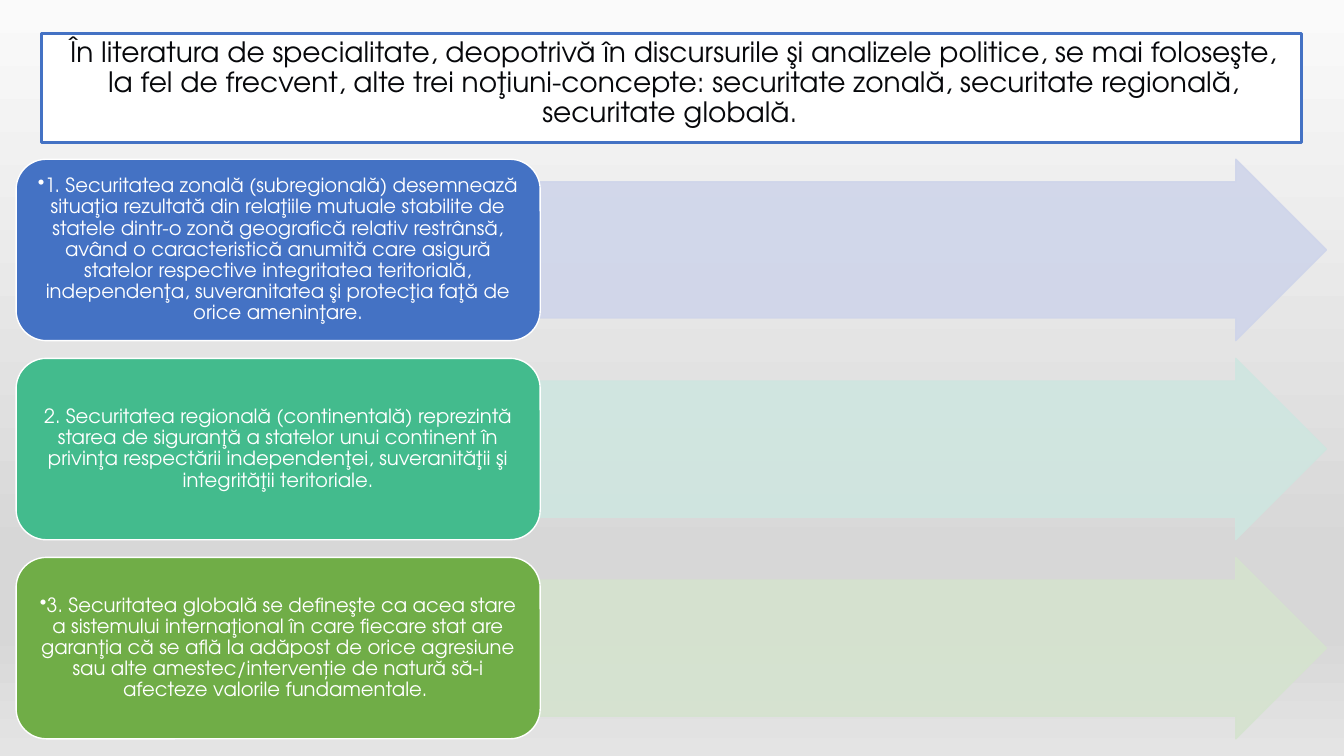
from lxml import etree
from pptx import Presentation
from pptx import util as u
from pptx.dml.color import RGBColor
from pptx.enum import shapes, text
from pptx.oxml.ns import qn

PX = 9144
FONT = "TeX Gyre Adventor"
COLOURS = {
    "ink": "07080B", "white": "FFFFFF", "blue": "4472C4", "teal": "43BB8D", "green": "70AD47",
    "pale_blue": "CFD5EA", "pale_teal": "CFE6E0", "pale_green": "D5E3CF",
}
BACKDROP = [(0, "FAFAFA"), (74, "D7D7D7"), (83, "D7D7D7"), (100, "E4E4E4")]
INTRO = ("În literatura de specialitate, deopotrivă în discursurile şi analizele politice, "
         "se mai foloseşte, la fel de frecvent, alte trei noţiuni-concepte: securitate zonală, "
         "securitate regională, securitate globală. ")
CONCEPTS = [
    ("blue", True,
     "1. Securitatea zonală (subregională) desemnează situaţia rezultată din relaţiile mutuale "
     "stabilite de statele dintr-o zonă geografică relativ restrânsă, având o caracteristică "
     "anumită care asigură statelor respective integritatea teritorială, independenţa, "
     "suveranitatea şi protecţia faţă de orice ameninţare."),
    ("teal", False,
     "2. Securitatea regională (continentală) reprezintă starea de siguranţă a statelor unui "
     "continent în privinţa respectării independenţei, suveranităţii şi integrităţii teritoriale."),
    ("green", True,
     "3. Securitatea globală se defineşte ca acea stare a sistemului internaţional în care "
     "fiecare stat are garanţia că se află la adăpost de orice agresiune sau alte "
     "amestec/intervenție de natură să-i afecteze valorile fundamentale. "),
]


def add_block(page, kind, box, fill, line, width):
    block = page.shapes.add_shape(kind, *(u.Emu(round(side * PX)) for side in box))
    block.shadow.inherit = False
    block.fill.solid()
    block.fill.fore_color.rgb = RGBColor.from_string(COLOURS[fill])
    block.line.color.rgb = RGBColor.from_string(COLOURS[line])
    block.line.width = u.Pt(width)
    return block


def write(block, words, size, colour, anchor):
    frame = block.text_frame
    frame.word_wrap = True
    frame.vertical_anchor = anchor
    para = frame.paragraphs[0]
    para.alignment = text.PP_ALIGN.CENTER
    para.line_spacing = 0.9
    span = para.add_run()
    span.text = words
    span.font.name = FONT
    span.font.size = u.Pt(size)
    span.font.color.rgb = RGBColor.from_string(COLOURS[colour])
    return para


def paint_backdrop(page):
    fill = page.background.fill
    fill.gradient()
    fill.gradient_angle = 270
    stops = page.element.find(".//" + qn("a:gsLst"))
    for stop in list(stops):
        stops.remove(stop)
    for position, colour in BACKDROP:
        stop = etree.SubElement(stops, qn("a:gs"), pos=str(position * 1000))
        etree.SubElement(stop, qn("a:srgbClr"), val=colour)


def add_intro(page, box):
    panel = add_block(page, shapes.MSO_SHAPE.RECTANGLE, box, "white", "blue", 2.25)
    para = write(panel, INTRO, 20, "ink", text.MSO_ANCHOR.TOP)
    para.space_before = u.Pt(18)
    para._p.get_or_add_pPr().set("marL", str(5 * PX))


def add_concept(page, box, colour, bulleted, words):
    left, top, width, height = box
    card_width = width * 2 / 5
    arrow = add_block(page, shapes.MSO_SHAPE.RIGHT_ARROW,
                      (left + card_width, top, width - card_width, height),
                      "pale_" + colour, "pale_" + colour, 1)
    arrow.adjustments[0] = 0.75
    arrow.adjustments[1] = 0.5
    for shade in arrow._element.spPr.iter(qn("a:srgbClr")):
        etree.SubElement(shade, qn("a:alpha"), val="90000")

    card = add_block(page, shapes.MSO_SHAPE.ROUNDED_RECTANGLE,
                     (left, top, card_width, height), colour, "white", 1)
    frame = card.text_frame
    frame.margin_left = frame.margin_right = 6 * PX
    frame.margin_top = frame.margin_bottom = 3 * PX
    para = write(card, words, 14, "white", text.MSO_ANCHOR.MIDDLE)
    if bulleted:
        props = para._p.get_or_add_pPr()
        props.set("marL", "0")
        props.set("indent", "0")
        etree.SubElement(props, qn("a:buChar"), char="•")


def add_concepts(page, box):
    left, top, width, height = box
    row_height = 180
    pitch = (height - row_height) / (len(CONCEPTS) - 1)
    for row, concept in enumerate(CONCEPTS):
        add_concept(page, (left, top + row * pitch, width, row_height), *concept)


def main():
    deck = Presentation()
    deck.slide_width = u.Emu(12192000)
    deck.slide_height = u.Emu(750 * PX)
    page = deck.slides.add_slide(deck.slide_layouts[6])
    paint_backdrop(page)
    add_intro(page, (41, 33, 1250, 108))
    add_concepts(page, (16, 158, 1300, 575))
    deck.save("out.pptx")


if __name__ == "__main__":
    main()
